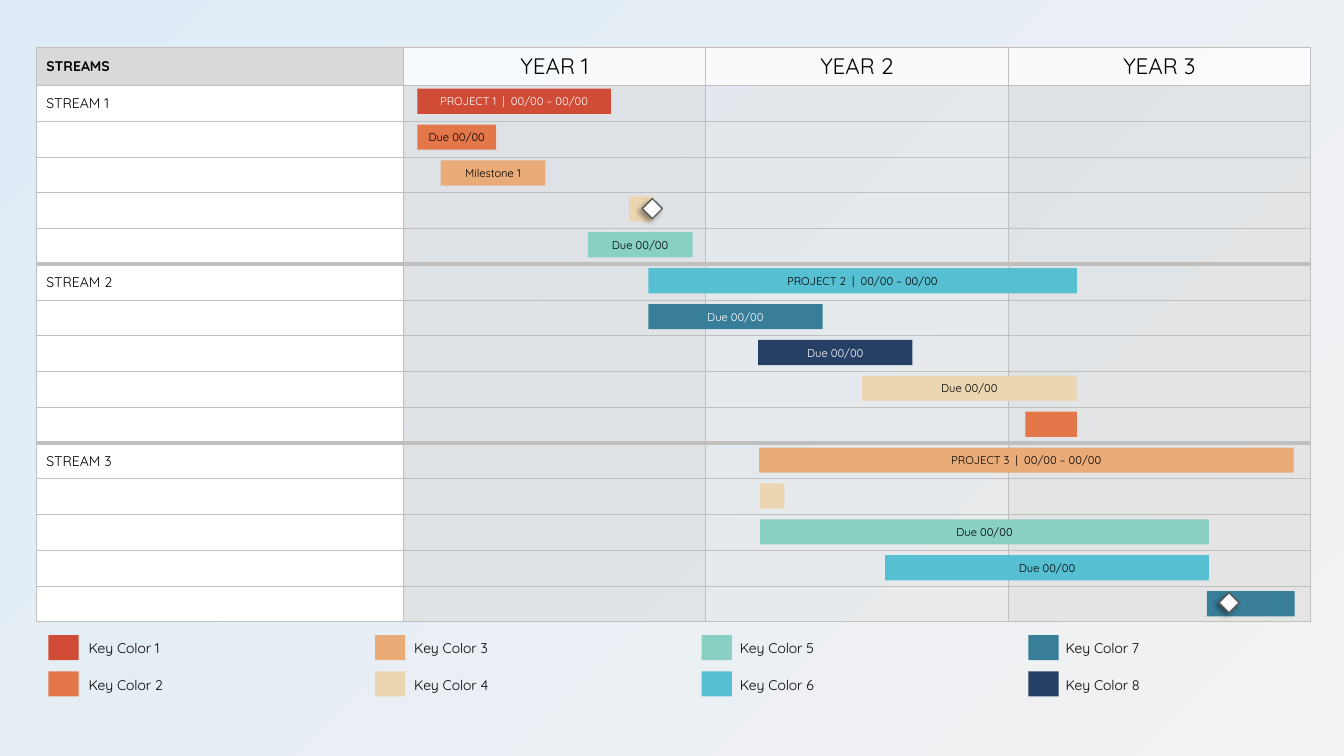
from pptx import Presentation
from pptx.dml.color import RGBColor
from pptx.enum import shapes, text
from pptx.oxml import parse_xml
from pptx.oxml.ns import nsdecls, qn
from pptx.util import Inches, Pt

# Content
YEARS = ["YEAR 1", "YEAR 2", "YEAR 3"]
STREAMS = ["STREAM 1", "STREAM 2", "STREAM 3"]
ROWS_PER_STREAM = 5
KEYS = [f"Key Color {number}" for number in range(1, 9)]
# One bar per row: left, width, key number, label
BARS = [
    (4.14, 1.92, 1, "PROJECT 1  |  00/00 – 00/00"),
    (4.14, 0.78, 2, "Due 00/00"),
    (4.37, 1.04, 3, "Milestone 1"),
    (6.24, 0.24, 4, ""),
    (5.83, 1.04, 5, "Due 00/00"),
    (6.43, 4.25, 6, "PROJECT 2  |  00/00 – 00/00"),
    (6.43, 1.73, 7, "Due 00/00"),
    (7.52, 1.53, 8, "Due 00/00"),
    (8.55, 2.13, 4, "Due 00/00"),
    (10.17, 0.51, 2, ""),
    (7.53, 5.3, 3, "PROJECT 3  |  00/00 – 00/00"),
    (7.54, 0.24, 4, ""),
    (7.54, 4.45, 5, "Due 00/00"),
    (8.78, 3.21, 6, "Due 00/00"),
    (11.97, 0.87, 7, ""),
]
MILESTONES = [(6.37, 1.97), (12.09, 5.88)]

THEME = {
    "font": "Quicksand",
    "keys": ["D14C36", "E4774A", "E9AB77", "ECD6B2",
             "89D0C2", "56BFD2", "387E99", "264065"],
    "light_text_keys": {1, 7, 8},
    "black": "000000", "white": "FFFFFF",
    "grey": "D9D9D9", "rule": "BFBFBF", "outline": "595959",
    "back_start": "F2F2F2", "back_end": "DEEBF7",
    "year_size": 16, "body_size": 10, "bar_size": 8,
    "thin": 0.5, "thick": 3,
}

# Layout, in inches
TABLE_LEFT, TABLE_TOP = 0.36, 0.47
STREAM_W, YEAR_W = 3.64, 3
HEADER_H, ROW_H = 0.37, 0.355
BAR_TOP, BAR_STEP, BAR_H = 0.88, 0.356, 0.25
KEY_LEFT, KEY_TOP, KEY_ROW_STEP = 0.48, 6.3, 0.36
SWATCH_STEP, SWATCH_W = 3.24, 0.3
LABEL_LEFT, LABEL_STEP, LABEL_W, LABEL_H = 0.78, 3.23, 2.4, 0.27
MILESTONE_SIZE = 0.2


def rgb(name):
    return RGBColor.from_string(name)


def set_alpha(element, percent):
    color = next(element.iter(qn("a:srgbClr")))
    color.append(parse_xml(f'<a:alpha {nsdecls("a")} val="{percent * 1000}"/>'))


def write(frame, words, size, color, align=None, bold=False):
    paragraph = frame.paragraphs[0]
    paragraph.text = words
    paragraph.alignment = align
    font = paragraph.font
    font.name, font.size, font.bold = THEME["font"], Pt(size), bold
    font.color.rgb = rgb(color)


def add_block(kind, left, top, width, height, color):
    block = slide.shapes.add_shape(
        kind, Inches(left), Inches(top), Inches(width), Inches(height))
    block.fill.solid()
    block.fill.fore_color.rgb = rgb(color)
    block.line.fill.background()
    block.shadow.inherit = False
    return block


def style_cell(cell, color, alpha, top_width, bottom_width):
    cell.vertical_anchor = text.MSO_ANCHOR.MIDDLE
    cell.fill.solid()
    cell.fill.fore_color.rgb = rgb(color)
    props = cell._tc.get_or_add_tcPr()
    if alpha < 100:
        set_alpha(props, alpha)
    widths = {"lnL": THEME["thin"], "lnR": THEME["thin"],
              "lnT": top_width, "lnB": bottom_width}
    for place, (side, width) in enumerate(widths.items()):
        props.insert(place, parse_xml(
            f'<a:{side} {nsdecls("a")} w="{Pt(width)}"><a:solidFill>'
            f'<a:srgbClr val="{THEME["rule"]}"/></a:solidFill></a:{side}>'))


prs = Presentation()
prs.slide_width, prs.slide_height = Inches(13.33), Inches(7.5)
slide = prs.slides.add_slide(prs.slide_layouts[6])

# Background
backdrop = slide.background.fill
backdrop.gradient()
backdrop.gradient_angle = 135
for stop, position, color in zip(backdrop.gradient_stops, (0, 1),
                                 (THEME["back_start"], THEME["back_end"])):
    stop.position = position
    stop.color.rgb = rgb(color)
set_alpha(slide.element, 40)

# Stream and year grid
row_count = 1 + len(STREAMS) * ROWS_PER_STREAM
grid = slide.shapes.add_table(
    row_count, 1 + len(YEARS), Inches(TABLE_LEFT), Inches(TABLE_TOP),
    Inches(STREAM_W + YEAR_W * len(YEARS)),
    Inches(HEADER_H + ROW_H * (row_count - 1))).table
grid.first_row = grid.horz_banding = False
for c, column in enumerate(grid.columns):
    column.width = Inches(YEAR_W if c else STREAM_W)
for r, row in enumerate(grid.rows):
    row.height = Inches(ROW_H if r else HEADER_H)
    stream, step = divmod(r - 1, ROWS_PER_STREAM)
    starts = r > 1 and step == 0
    ends = 0 < r < row_count - 1 and step == ROWS_PER_STREAM - 1
    for c, cell in enumerate(row.cells):
        if r == 0:
            color, alpha = (THEME["white"], 75) if c else (THEME["grey"], 100)
        elif c == 0:
            color, alpha = THEME["white"], 100
        else:
            color, alpha = THEME["grey"], 50 if c % 2 else 25
        style_cell(cell, color, alpha,
                   THEME["thick"] if starts else THEME["thin"],
                   THEME["thick"] if ends else THEME["thin"])
        if r == 0 and c:
            write(cell.text_frame, YEARS[c - 1], THEME["year_size"],
                  THEME["black"], text.PP_ALIGN.CENTER)
        elif c == 0 and (r == 0 or step == 0):
            write(cell.text_frame, STREAMS[stream] if r else "STREAMS",
                  THEME["body_size"], THEME["black"], bold=r == 0)
        else:  # Small type keeps empty rows at their height
            cell.text_frame.paragraphs[0]._p.append(parse_xml(
                f'<a:endParaRPr {nsdecls("a")} sz="{THEME["body_size"] * 100}"/>'))

# Project bars
for i, (left, width, key, label) in enumerate(BARS):
    bar = add_block(shapes.MSO_SHAPE.RECTANGLE, left, BAR_TOP + i * BAR_STEP,
                    width, BAR_H, THEME["keys"][key - 1])
    if label:
        ink = "white" if key in THEME["light_text_keys"] else "black"
        write(bar.text_frame, label, THEME["bar_size"], THEME[ink],
              text.PP_ALIGN.CENTER)

# Milestone diamonds
for left, top in MILESTONES:
    diamond = add_block(shapes.MSO_SHAPE.DIAMOND, left, top,
                        MILESTONE_SIZE, MILESTONE_SIZE, THEME["white"])
    diamond.line.color.rgb = rgb(THEME["outline"])
    diamond.line.width = Pt(1)
    diamond._element.spPr.find(qn("a:effectLst")).append(parse_xml(
        f'<a:outerShdw {nsdecls("a")} blurRad="{Pt(4)}" dist="{Pt(3)}" '
        f'dir="{135 * 60000}" algn="tr" rotWithShape="0"><a:srgbClr '
        f'val="{THEME["black"]}"><a:alpha val="40000"/></a:srgbClr></a:outerShdw>'))

# Color key
for i, (name, color) in enumerate(zip(KEYS, THEME["keys"])):
    column, line = divmod(i, 2)
    top = KEY_TOP + line * KEY_ROW_STEP
    add_block(shapes.MSO_SHAPE.RECTANGLE, KEY_LEFT + column * SWATCH_STEP, top,
              SWATCH_W, BAR_H, color)
    label = slide.shapes.add_textbox(
        Inches(LABEL_LEFT + column * LABEL_STEP), Inches(top),
        Inches(LABEL_W), Inches(LABEL_H)).text_frame
    label.word_wrap = True
    label.auto_size = text.MSO_AUTO_SIZE.SHAPE_TO_FIT_TEXT
    write(label, name, THEME["body_size"], THEME["black"])

prs.save("out.pptx")
